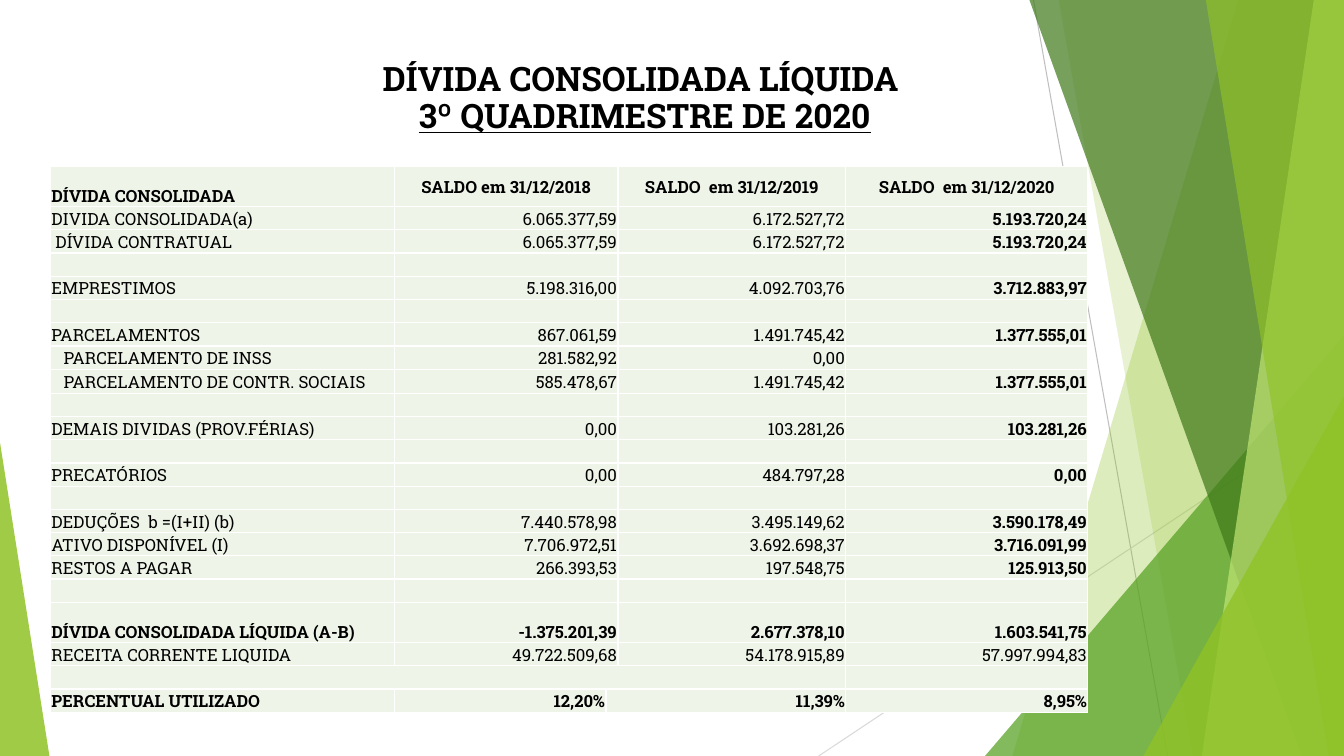
from lxml.etree import SubElement
from pptx import Presentation
from pptx.dml.color import RGBColor
from pptx.enum.shapes import MSO_CONNECTOR, MSO_SHAPE
from pptx.enum.text import MSO_ANCHOR, MSO_AUTO_SIZE, PP_ALIGN
from pptx.oxml.ns import qn
from pptx.util import Inches, Pt

FONT = "Roboto Slab"


def paint(fill, color, alpha=100):
    fill.solid()
    fill.fore_color.rgb = RGBColor.from_string(color)
    if alpha < 100:
        tone = fill._xPr.find(qn("a:solidFill"))[0]
        SubElement(tone, qn("a:alpha"), val=str(alpha * 1000))


def add_run(para, text, size, bold):
    run = para.add_run()
    run.text = text
    run.font.name = FONT
    run.font.size = Pt(size)
    run.font.bold = bold
    paint(run.font.fill, "000000")
    return run


deck = Presentation()
deck.slide_width, deck.slide_height = Inches(13.33), Inches(7.5)
slide = deck.slides.add_slide(deck.slide_layouts[5])
shapes = slide.shapes
title = shapes.title

# Thin lines behind the facets
for x1, y1, x2, color in [(10.25, 0, 11.58, "BFBFBF"), (13.33, 4.03, 8.12, "D9D9D9")]:
    line = shapes.add_connector(MSO_CONNECTOR.STRAIGHT, Inches(x1), Inches(y1),
                                Inches(x2), Inches(7.5))
    line.line.width = Pt(0.75)
    paint(line.line.fill, color)
    SubElement(line._element.spPr, qn("a:effectLst"))

# Facets: bands run from top x to bottom x, peaks are (left, top, width, tip)
facets = [
    ("band", (12.28, 10.04), "90C226", 30),
    ("band", (10.5, 11.83), "90C226", 20),
    ("peak", (9.77, 3.33, 3.56, 1), "54A021", 72),
    ("band", (10.21, 12.91), "3F7819", 70),
    ("band", (13.03, 11.92), "C0E474", 70),
    ("band", (11.96, 13.18), "90C226", 65),
    ("peak", (11.34, 3.93, 1.99, 1), "90C226", 80),
    ("peak", (0, 4.39, 0.49, 0), "90C226", 85),
]
for kind, place, color, alpha in facets:
    if kind == "band":
        top, base = place
        build = shapes.build_freeform(Inches(top), 0)
        build.add_line_segments([(Inches(x), Inches(y)) for x, y in
                                 [(13.33, 0), (13.33, 7.5), (base, 7.5)]])
        facet = build.convert_to_shape()
    else:
        left, top, width, tip = place
        facet = shapes.add_shape(MSO_SHAPE.ISOSCELES_TRIANGLE, Inches(left), Inches(top),
                                 Inches(width), Inches(7.5 - top))
        facet.adjustments[0] = tip
    facet.shadow.inherit = False
    facet.line.fill.background()
    paint(facet.fill, color, alpha)

# Title, in front of the facets
shapes._spTree.append(title._element)
title.left, title.top = Inches(1.75), Inches(0.56)
title.width, title.height = Inches(9.29), Inches(1.07)
frame = title.text_frame
frame.word_wrap = True
frame.auto_size = MSO_AUTO_SIZE.NONE
frame.vertical_anchor = MSO_ANCHOR.TOP
para = frame.paragraphs[0]
para.alignment = PP_ALIGN.CENTER
para.line_spacing = 0.93
add_run(para, "DÍVIDA CONSOLIDADA LÍQUIDA ", 24, True)
para.add_line_break()
add_run(para, "3º QUADRIMESTRE DE 2020", 24, True).font.underline = True

# Debt table
blank = ("", "", "", "")
rows = [
    ("DÍVIDA CONSOLIDADA", "SALDO em 31/12/2018", "SALDO  em 31/12/2019", "SALDO  em 31/12/2020"),
    ("DIVIDA CONSOLIDADA(a)", "6.065.377,59", "6.172.527,72", "5.193.720,24"),
    ("DÍVIDA CONTRATUAL", "6.065.377,59", "6.172.527,72", "5.193.720,24"),
    blank,
    ("EMPRESTIMOS", "5.198.316,00", "4.092.703,76", "3.712.883,97"),
    blank,
    ("PARCELAMENTOS", "867.061,59", "1.491.745,42", "1.377.555,01"),
    ("PARCELAMENTO DE INSS", "281.582,92", "0,00", ""),
    ("PARCELAMENTO DE CONTR. SOCIAIS", "585.478,67", "1.491.745,42", "1.377.555,01"),
    blank,
    ("DEMAIS DIVIDAS (PROV.FÉRIAS)", "0,00", "103.281,26", "103.281,26"),
    blank,
    ("PRECATÓRIOS", "0,00", "484.797,28", "0,00"),
    blank,
    ("DEDUÇÕES  b =(I+II) (b)", "7.440.578,98", "3.495.149,62", "3.590.178,49"),
    ("ATIVO DISPONÍVEL (I)", "7.706.972,51", "3.692.698,37", "3.716.091,99"),
    ("RESTOS A PAGAR", "266.393,53", "197.548,75", "125.913,50"),
    blank,
    ("DÍVIDA CONSOLIDADA LÍQUIDA (A-B)", "-1.375.201,39", "2.677.378,10", "1.603.541,75"),
    ("RECEITA CORRENTE LIQUIDA", "49.722.509,68", "54.178.915,89", "57.997.994,83"),
    blank,
    ("PERCENTUAL UTILIZADO", "12,20%", "11,39%", "8,95%"),
]
last = len(rows) - 1
strong, plain = (0, 18, last), 19
indents = {2: 0.05, 7: 0.13, 8: 0.13}
heights = {0: 0.4, 8: 0.24, 18: 0.4}
widths = [3.41, 2.1, 0.12, 2.26, 2.4]

table = shapes.add_table(len(rows), len(widths), Inches(0.5), Inches(1.65),
                         Inches(10.29), Inches(4.99)).table
table.first_row = table.horz_banding = False
for col, width in zip(table.columns, widths):
    col.width = Inches(width)

for r, texts in enumerate(rows):
    table.rows[r].height = Inches(heights.get(r, 0.2))
    # The narrow third column joins a neighbour in each row
    start, end = {last - 1: (0, 3), last: (2, 3)}.get(r, (1, 2))
    table.cell(r, start).merge(table.cell(r, end))
    slots = (0, 1, 2, 4) if r == last else (0, 1, 3, 4)
    words = dict(zip(slots, texts))
    for c in range(len(widths)):
        cell = table.cell(r, c)
        paint(cell.fill, "EEF4E8")
        cell.margin_left = Inches(indents.get(r, 0.01) if c == 0 else 0.01)
        cell.margin_right = cell.margin_top = Inches(0.01)
        cell.margin_bottom = 0
        cell.vertical_anchor = MSO_ANCHOR.MIDDLE if r == 0 and c else MSO_ANCHOR.BOTTOM
        para = cell.text_frame.paragraphs[0]
        if c:
            para.alignment = PP_ALIGN.RIGHT if r else PP_ALIGN.CENTER
        if words.get(c):
            add_run(para, words[c], 12, r in strong or (c == 4 and r != plain))
        else:
            mark = SubElement(para._p, qn("a:endParaRPr"), sz="1200")
            SubElement(mark, qn("a:latin"), typeface=FONT)

deck.save("out.pptx")
